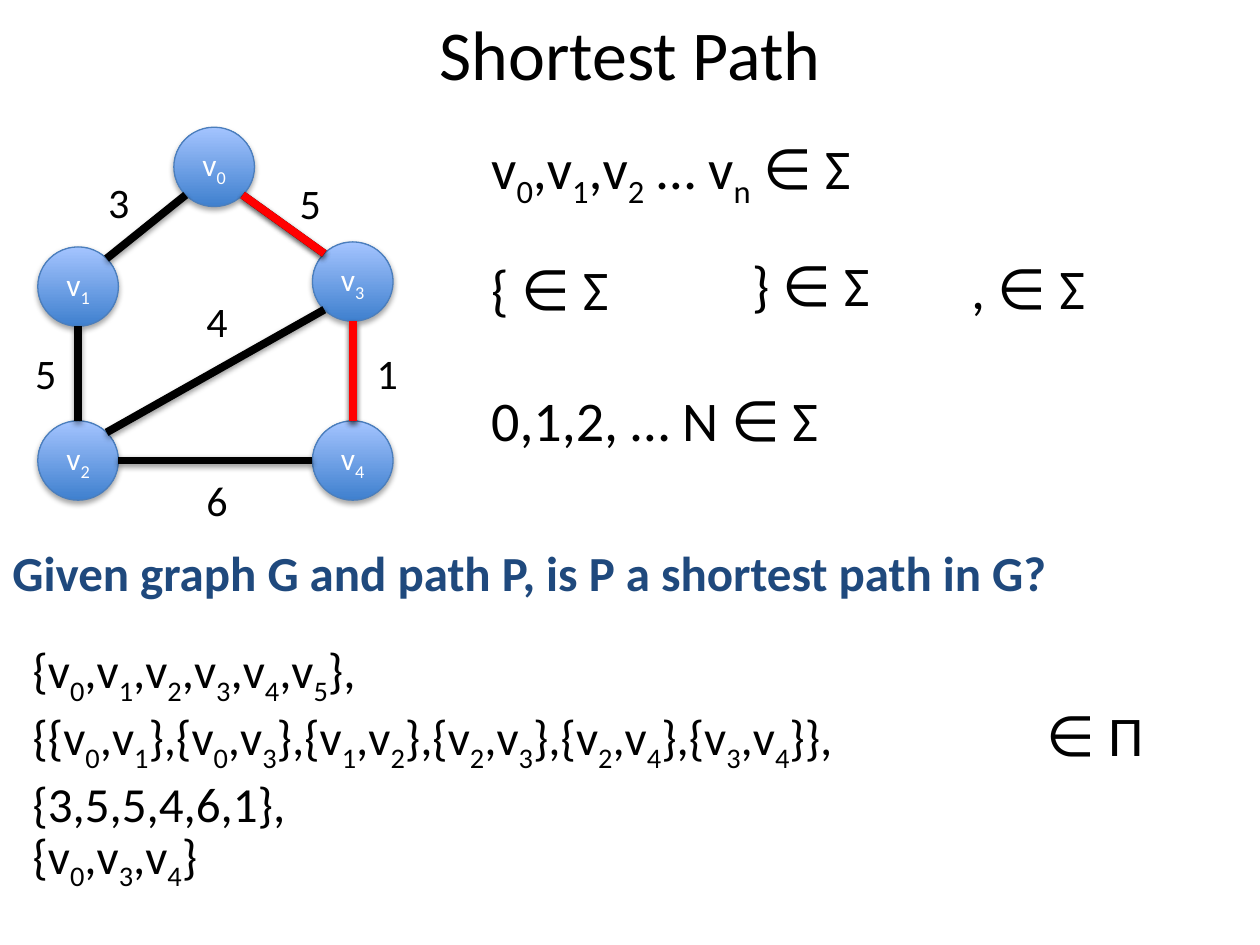
from dataclasses import dataclass
from math import cos, radians, sin

from lxml import etree
from pptx import Presentation
from pptx.dml.color import RGBColor
from pptx.enum.shapes import MSO_CONNECTOR, MSO_SHAPE
from pptx.enum.text import MSO_ANCHOR, MSO_AUTO_SIZE, PP_ALIGN
from pptx.oxml.ns import qn
from pptx.util import Inches, Pt

STRAIGHT = MSO_CONNECTOR.STRAIGHT
OVAL = MSO_SHAPE.OVAL
LEFT, CENTER = PP_ALIGN.LEFT, PP_ALIGN.CENTER
TOP, MIDDLE = MSO_ANCHOR.TOP, MSO_ANCHOR.MIDDLE
FIT_SHAPE = MSO_AUTO_SIZE.SHAPE_TO_FIT_TEXT


@dataclass
class Theme:
    font: str = "Calibri"
    black: str = "000000"
    white: str = "FFFFFF"
    question: str = "1F497D"
    path_edge: str = "FF0000"
    node_dark: str = "3F80CE"
    node_light: str = "A4C4FF"
    node_line: str = "4B7EBC"
    title_size: int = 40
    symbol_size: int = 32
    body_size: int = 28
    weight_size: int = 24
    node_size: int = 18
    edge_width: float = 4.5


def write_text(frame, text, *, font, size, color, bold=False, align=LEFT, anchor=TOP, wrap=False):
    """Write one paragraph per line; the character after "_" is a subscript."""
    frame.word_wrap = wrap
    frame.vertical_anchor = anchor
    for number, line in enumerate(text.split("\n")):
        paragraph = frame.add_paragraph() if number else frame.paragraphs[0]
        paragraph.alignment = align
        first, *rest = line.split("_")
        pieces = [(first, False)]
        for part in rest:
            pieces += [(part[0], True), (part[1:], False)]
        for piece, subscript in pieces:
            if not piece:
                continue
            run = paragraph.add_run()
            run.text = piece
            run.font.name = font
            run.font.size = Pt(size)
            run.font.bold = bold
            run.font.color.rgb = RGBColor.from_string(color)
            if subscript:
                run._r.get_or_add_rPr().set("baseline", "-25000")


def add_shadow(shape, distance, opacity):
    effects = etree.SubElement(shape._element.spPr, qn("a:effectLst"))
    shadow = etree.SubElement(effects, qn("a:outerShdw"), blurRad="40000", dist=str(distance),
                              dir="5400000", rotWithShape="0")
    color = etree.SubElement(shadow, qn("a:srgbClr"), val="000000")
    etree.SubElement(color, qn("a:alpha"), val=str(opacity * 1000))


class SlideBuilder:
    def __init__(self, slide, theme):
        self.slide = slide
        self.theme = theme

    def text(self, text, left, top, width, height, size, color=None, fit=True, **options):
        box = self.slide.shapes.add_textbox(Inches(left), Inches(top), Inches(width), Inches(height))
        write_text(box.text_frame, text, font=self.theme.font, size=size,
                   color=color or self.theme.black, **options)
        if fit:
            box.text_frame.auto_size = FIT_SHAPE

    def node(self, label, left, top, width, height):
        theme = self.theme
        shape = self.slide.shapes.add_shape(OVAL, Inches(left), Inches(top),
                                            Inches(width), Inches(height))
        shape.fill.gradient()
        shape.fill.gradient_angle = 90
        for stop, color in zip(shape.fill.gradient_stops, (theme.node_dark, theme.node_light)):
            stop.color.rgb = RGBColor.from_string(color)
        shape.line.color.rgb = RGBColor.from_string(theme.node_line)
        shape.line.width = Pt(0.75)
        add_shadow(shape, 23000, 35)
        frame = shape.text_frame
        frame.margin_left = frame.margin_right = frame.margin_top = frame.margin_bottom = 0
        write_text(frame, label, font=theme.font, size=theme.node_size, color=theme.white,
                   align=CENTER, anchor=MIDDLE)

    def edge(self, start, end, color):
        connector = self.slide.shapes.add_connector(STRAIGHT, *map(Inches, start + end))
        connector.line.color.rgb = RGBColor.from_string(color)
        connector.line.width = Pt(self.theme.edge_width)
        add_shadow(connector, 20000, 38)


NODE_WIDTH, NODE_HEIGHT = 0.64, 0.63
NODES = {"v_1": (0.3, 1.96), "v_0": (1.38, 1.01), "v_2": (0.3, 3.34),
         "v_3": (2.48, 1.92), "v_4": (2.48, 3.34)}

# Each edge: start node, angle of departure, end node, angle of arrival
# (degrees clockwise from the right)
EDGES = [("v_1", -45, "v_0", 135), ("v_1", 90, "v_2", -90), ("v_0", 45, "v_3", -135),
         ("v_2", -45, "v_3", 135), ("v_3", 90, "v_4", -90), ("v_2", 0, "v_4", 180)]
SHORTEST_PATH = [EDGES[2], EDGES[4]]

WEIGHTS = [("3", 0.76, 1.35), ("5", 2.28, 1.36), ("4", 1.54, 2.3),
           ("5", 0.18, 2.71), ("1", 2.89, 2.71), ("6", 1.54, 3.72)]

SYMBOLS = [("v_0,v_1,v_2 … v_n ∈ Σ", 3.8, 1.01, 3.56), ("{ ∈ Σ", 3.8, 1.97, 1.2),
           ("0,1,2, … N ∈ Σ", 3.8, 3.01, 3.19), ("} ∈ Σ", 5.87, 1.94, 1.2),
           (", ∈ Σ", 7.61, 1.96, 1.2), ("∈ Π", 8.21, 5.51, 0.97)]

GRAPH_ENCODING = "\n".join([
    "{v_0,v_1,v_2,v_3,v_4,v_5},",
    "{{v_0,v_1},{v_0,v_3},{v_1,v_2},{v_2,v_3},{v_2,v_4},{v_3,v_4}},",
    "{3,5,5,4,6,1},",
])


def rim_point(name, angle):
    left, top = NODES[name]
    return (left + NODE_WIDTH / 2 * (1 + cos(radians(angle))),
            top + NODE_HEIGHT / 2 * (1 + sin(radians(angle))))


def main():
    presentation = Presentation()
    presentation.slide_width, presentation.slide_height = Inches(10), Inches(7.5)
    theme = Theme()
    builder = SlideBuilder(presentation.slides.add_slide(presentation.slide_layouts[6]), theme)

    # Title
    builder.text("Shortest Path", 0.5, 0.06, 9, 0.71, theme.title_size, fit=False,
                 align=CENTER, anchor=MIDDLE, wrap=True)

    # Alphabet symbols and problem membership
    for text, left, top, width in SYMBOLS:
        builder.text(text, left, top, width, 0.64, theme.symbol_size)

    # Weighted graph, with the path on top
    for name, (left, top) in NODES.items():
        builder.node(name, left, top, NODE_WIDTH, NODE_HEIGHT)
    for edges, color in ((EDGES, theme.black), (SHORTEST_PATH, theme.path_edge)):
        for start, departure, end, arrival in edges:
            builder.edge(rim_point(start, departure), rim_point(end, arrival), color)
    for weight, left, top in WEIGHTS:
        builder.text(weight, left, top, 0.39, 0.5, theme.weight_size)

    # Question and encoded instance
    builder.text("Given graph G and path P, is P a shortest path in G?", 0, 4.26, 10, 0.57,
                 theme.body_size, theme.question, bold=True, wrap=True)
    builder.text(GRAPH_ENCODING, 0.16, 5.03, 7.45, 1.51, theme.body_size)
    builder.text("{v_0,v_3,v_4}", 0.16, 6.5, 1.71, 0.57, theme.body_size)

    presentation.save("out.pptx")


if __name__ == "__main__":
    main()
